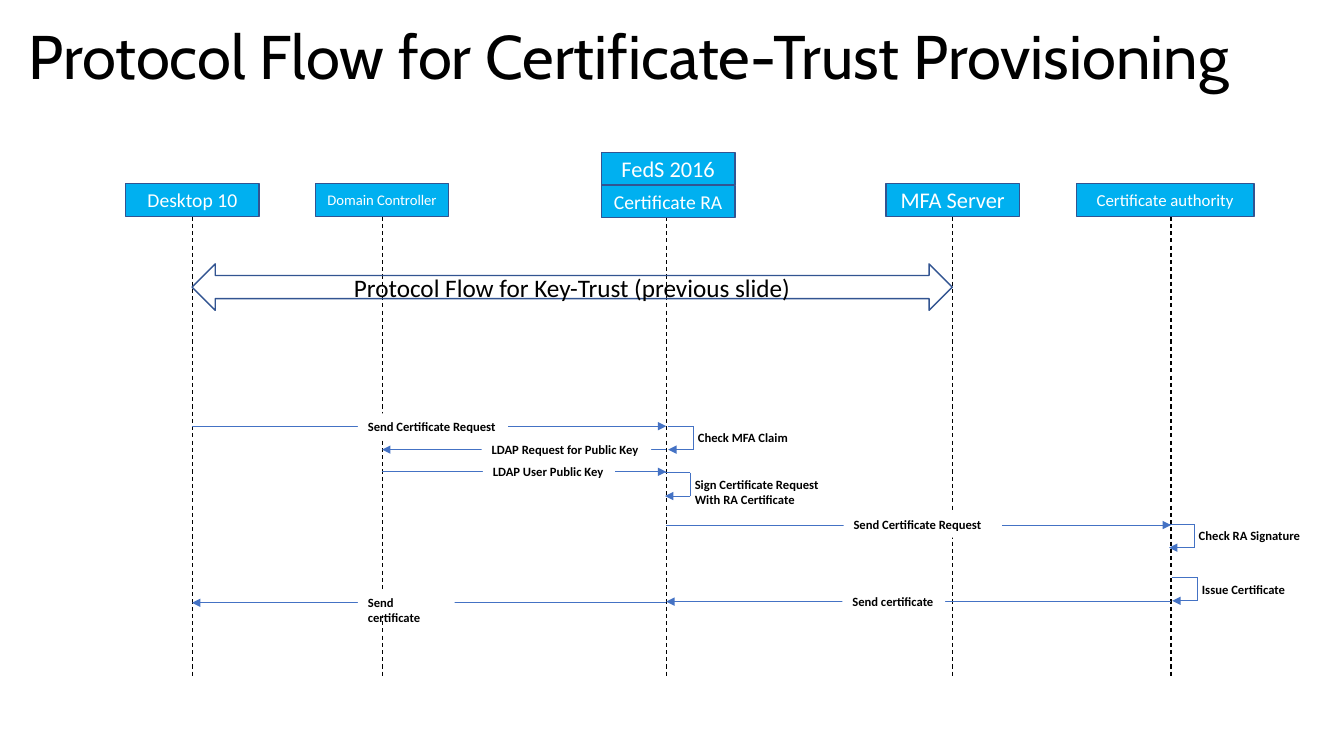
"""Build the certificate-trust provisioning sequence diagram slide."""
import itertools

import pptx
import pptx.dml.color
import pptx.enum.dml
import pptx.enum.shapes
import pptx.enum.text
import pptx.oxml.ns
import pptx.util
from lxml import etree

Cm = pptx.util.Cm
Pt = pptx.util.Pt
RGBColor = pptx.dml.color.RGBColor
SHAPE = pptx.enum.shapes.MSO_SHAPE
ALIGN = pptx.enum.text.PP_ALIGN
ANCHOR = pptx.enum.text.MSO_ANCHOR

BLACK = RGBColor(0x00, 0x00, 0x00)
WHITE = RGBColor(0xFF, 0xFF, 0xFF)
SKY = RGBColor(0x00, 0xB0, 0xF0)
NAVY = RGBColor(0x32, 0x54, 0x91)
BLUE = RGBColor(0x44, 0x72, 0xC4)

TITLE = "Protocol Flow for Certificate-Trust Provisioning"
KEY_TRUST = "Protocol Flow for Key-Trust (previous slide)"

# name, left, top, width, font size
HEADERS = [
    ("Desktop 10", 3.17, 4.63, 3.36, 14),
    ("Domain Controller", 7.95, 4.63, 3.36, 10.5),
    ("MFA Server", 22.33, 4.63, 3.36, 16),
    ("Certificate authority", 27.13, 4.63, 4.47, 12),
    ("Certificate RA", 15.16, 4.67, 3.36, 14),
    ("FedS 2016", 15.16, 3.84, 3.36, 16),
]
LIFELINES = {"client": 4.84, "domain": 9.63, "federation": 16.79, "mfa": 24, "authority": 29.51}
# sender, receiver, height on slide, label, label left, label width
MESSAGES = [
    ("client", "federation", 10.74, "Send Certificate Request", 9.02, 3.78),
    ("federation", "domain", 11.33, "LDAP Request for Public Key", 12.14, 4.27),
    ("domain", "federation", 11.89, "LDAP User Public Key", 12.17, 3.33),
    ("federation", "authority", 13.23, "Send Certificate Request", 21.26, 3.99),
    ("authority", "federation", 15.16, "Send certificate", 21.23, 2.59),
    ("federation", "client", 15.19, "Send certificate", 9.02, 2.44),
]
# left, top, label, label width
SELF_CALLS = [
    (16.84, 10.74, "Check MFA Claim", 2.82),
    (16.76, 11.91, "Sign Certificate Request\nWith RA Certificate", 3.68),
    (29.46, 13.21, "Check RA Signature", 3.1),
    (29.54, 14.55, "Issue Certificate", 2.64),
]
HEADER_HEIGHT = 0.82
LIFELINE_TOP, LIFELINE_BOTTOM = 5.46, 17.1
LABEL_HEIGHT = 0.64
LOOP_WIDTH, LOOP_HEIGHT = 0.64, 0.59


def style_text(shape, text, size, color, align, bold=False, font="Calibri"):
    frame = shape.text_frame
    frame.text = text
    frame.word_wrap = True
    for paragraph in frame.paragraphs:
        paragraph.alignment = align
        for run in paragraph.runs:
            run.font.name = font
            run.font.size = Pt(size)
            run.font.bold = bold
            run.font.color.rgb = color


def add_block(slide, kind, box, text, size, color, fill=None):
    shape = slide.shapes.add_shape(kind, *map(Cm, box))
    shape.shadow.inherit = False
    if fill is None:
        shape.fill.background()
    else:
        shape.fill.solid()
        shape.fill.fore_color.rgb = fill
    shape.line.color.rgb = NAVY
    shape.line.width = Pt(1)
    style_text(shape, text, size, color, ALIGN.CENTER)
    shape.text_frame.vertical_anchor = ANCHOR.MIDDLE


def add_line(slide, start, end, color, width, dashed=False, arrow=False):
    line = slide.shapes.add_connector(
        pptx.enum.shapes.MSO_CONNECTOR.STRAIGHT, *map(Cm, (*start, *end)))
    line.line.color.rgb = color
    line.line.width = Pt(width)
    if dashed:
        line.line.dash_style = pptx.enum.dml.MSO_LINE.DASH
    properties = line._element.spPr
    if arrow:
        outline = properties.find(pptx.oxml.ns.qn("a:ln"))
        etree.SubElement(outline, pptx.oxml.ns.qn("a:tailEnd"), type="triangle")
    etree.SubElement(properties, pptx.oxml.ns.qn("a:effectLst"))


def add_label(slide, left, top, width, text, filled=False):
    height = LABEL_HEIGHT + 0.38 * text.count("\n")
    label = slide.shapes.add_textbox(*map(Cm, (left, top, width, height)))
    if filled:
        label.fill.solid()
        label.fill.fore_color.rgb = WHITE
    style_text(label, text, 9, BLACK, ALIGN.LEFT, bold=True)
    label.text_frame.margin_right = Cm(0.2)


def add_title(slide):
    title = slide.shapes.title
    title.left, title.top, title.width, title.height = map(Cm, (0.46, 0.41, 32.89, 2.18))
    style_text(title, TITLE, 44, BLACK, ALIGN.LEFT, font="Cabin")
    title.text_frame.auto_size = pptx.enum.text.MSO_AUTO_SIZE.NONE
    title.text_frame.vertical_anchor = ANCHOR.MIDDLE
    title.text_frame.paragraphs[0].line_spacing = 0.9


def main():
    presentation = pptx.Presentation()
    presentation.slide_width, presentation.slide_height = Cm(33.87), Cm(19.05)
    slide = presentation.slides.add_slide(presentation.slide_layouts[5])
    add_title(slide)

    for x in LIFELINES.values():
        add_line(slide, (x, LIFELINE_TOP), (x, LIFELINE_BOTTOM), BLACK, 0.75, dashed=True)
    for name, left, top, width, size in HEADERS:
        add_block(slide, SHAPE.RECTANGLE, (left, top, width, HEADER_HEIGHT),
                  name, size, WHITE, SKY)

    for sender, receiver, y, text, left, width in MESSAGES:
        add_line(slide, (LIFELINES[sender], y), (LIFELINES[receiver], y), BLUE, 0.5, arrow=True)
        add_label(slide, left, y - LABEL_HEIGHT / 2, width, text, filled=True)

    for left, top, text, width in SELF_CALLS:
        right, bottom = left + LOOP_WIDTH, top + LOOP_HEIGHT
        corners = [(left, top), (right, top), (right, bottom), (left, bottom)]
        for start, end in itertools.pairwise(corners):
            add_line(slide, start, end, BLUE, 0.5, arrow=end == corners[-1])
        add_label(slide, left + 0.5, top - 0.02, width, text)

    span = LIFELINES["mfa"] - LIFELINES["client"]
    add_block(slide, SHAPE.LEFT_RIGHT_ARROW, (LIFELINES["client"], 6.65, span, 1.17),
              KEY_TRUST, 18, BLACK)
    presentation.save("out.pptx")


if __name__ == "__main__":
    main()
